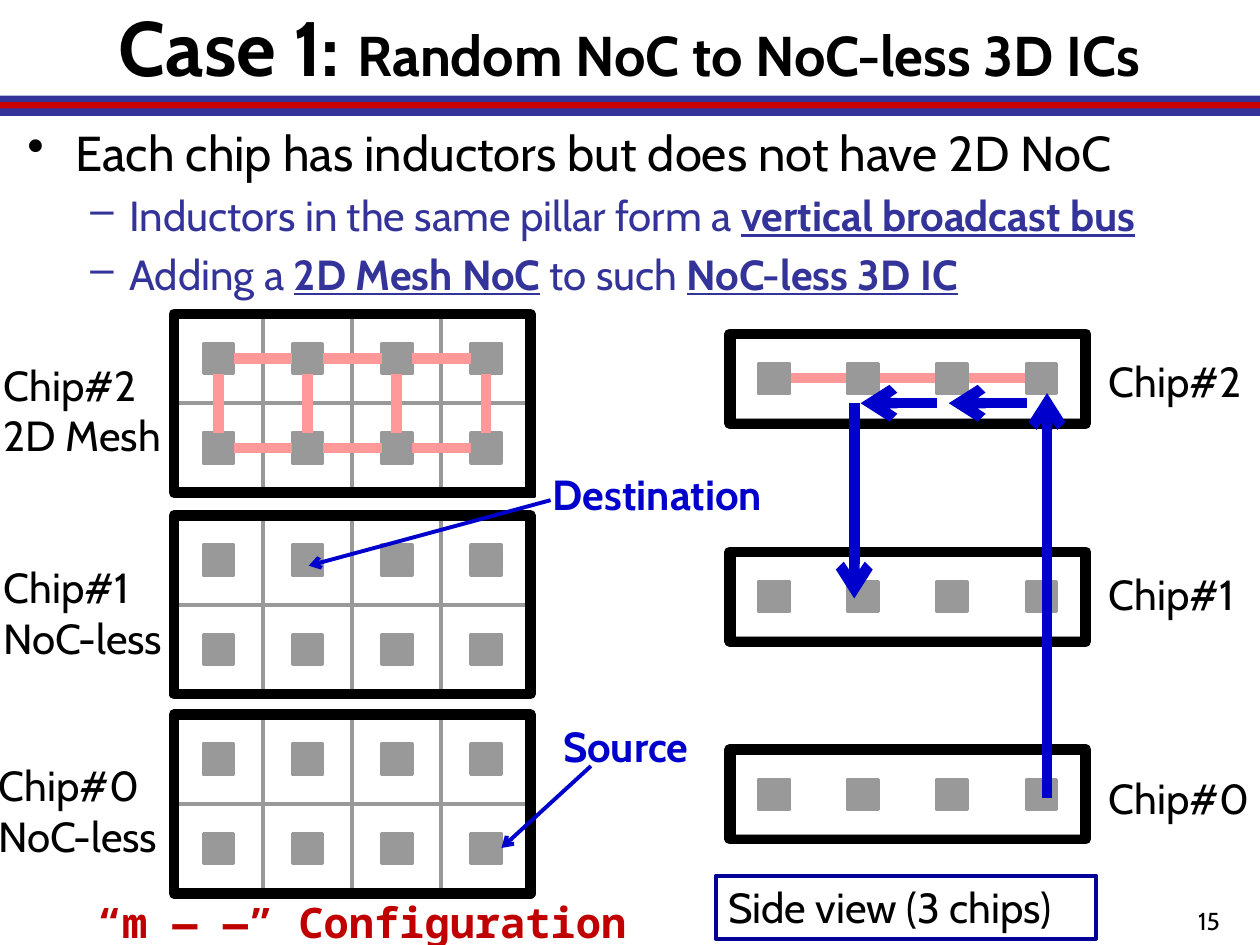
from lxml.etree import SubElement
from pptx import Presentation
from pptx.dml.color import RGBColor as RGB
from pptx.enum.shapes import MSO_CONNECTOR as Conn, MSO_SHAPE as Shape
from pptx.enum.text import MSO_ANCHOR as Anchor, PP_ALIGN as Align
from pptx.oxml.ns import qn
from pptx.util import Inches, Pt

HUE = {"black": "000000", "white": "FFFFFF", "navy": "333399", "band": "CC0000",
       "link": "FF0000", "route": "0000CC", "edge": "000099", "brick": "C00000"}
FONT, MONO = "Cabin", "Noto Sans Mono"

deck = Presentation()
deck.slide_width, deck.slide_height = Inches(10), Inches(7.5)
slide = deck.slides.add_slide(deck.slide_layouts[6])
shapes = slide.shapes


def box(x, y, w, h, fill=None, edge="black", width=2, alpha=None):
    item = shapes.add_shape(Shape.RECTANGLE, Inches(x), Inches(y), Inches(w), Inches(h))
    item.shadow.inherit = False
    if fill:
        item.fill.solid()
        item.fill.fore_color.rgb = RGB.from_string(HUE[fill])
    else:
        item.fill.background()
    if edge:
        item.line.color.rgb = RGB.from_string(HUE[edge])
        item.line.width = Pt(width)
    else:
        item.line.fill.background()
    if alpha:
        tint = item._element.spPr.find(qn("a:solidFill"))[0]
        SubElement(tint, qn("a:alpha"), val=str(alpha * 1000))
    return item


def line(x1, y1, x2, y2, color="link", width=6, arrow=False):
    item = shapes.add_connector(Conn.STRAIGHT, Inches(x1), Inches(y1), Inches(x2), Inches(y2))
    item.line.color.rgb = RGB.from_string(HUE[color])
    item.line.width = Pt(width)
    props = item._element.spPr
    if arrow:
        SubElement(props.find(qn("a:ln")), qn("a:headEnd"), type="arrow")
    SubElement(props, qn("a:effectLst"))


# Header bands
box(0, 0.76, 10.01, 0.16, "navy", None)
box(0, 0.81, 10.01, 0.05, "band", None)

# Title and bullets: runs are (text, size, marked)
title = shapes.add_textbox(Inches(0), Inches(-0.03), Inches(10), Inches(0.79)).text_frame
title.word_wrap = True
title.vertical_anchor = Anchor.MIDDLE
head = title.paragraphs[0]
head.alignment = Align.CENTER
head.font.name, head.font.bold = FONT, True
head.font.color.rgb = RGB.from_string(HUE["black"])
for text, size in (("Case 1: ", 44), ("Random NoC to NoC-less 3D ICs", 32)):
    run = head.add_run()
    run.text, run.font.size = text, Pt(size)

body = shapes.add_textbox(Inches(0.12), Inches(0.92), Inches(9.96), Inches(1.57)).text_frame
body.word_wrap = True
points = [
    (0, [("Each chip has inductors but does not have 2D NoC", False)]),
    (1, [("Inductors in the same pillar form a ", False), ("vertical broadcast bus", True)]),
    (1, [("Adding a ", False), ("2D Mesh NoC", True), (" to such ", False),
         ("NoC-less 3D IC", True)]),
]
styles = [("•", 28, "black", 0.38, 0.38), ("–", 24, "navy", 0.81, 0.31)]
for i, (level, runs) in enumerate(points):
    mark, size, color, left, hang = styles[level]
    para = body.add_paragraph() if i else body.paragraphs[0]
    para.level = level
    para.space_before = Pt(size * 0.2)
    para.font.name, para.font.size = FONT, Pt(size)
    para.font.color.rgb = RGB.from_string(HUE[color])
    props = para._p.get_or_add_pPr()
    props.set("marL", str(Inches(left)))
    props.set("indent", str(-Inches(hang)))
    bullet = SubElement(props, qn("a:buChar"), char=mark)
    props.find(qn("a:defRPr")).addprevious(bullet)
    for text, marked in runs:
        run = para.add_run()
        run.text = text
        if marked:
            run.font.bold = run.font.underline = True

# Top views: a 4 x 2 grid of cells, one inductor in each
COLS, ROWS, NODE = 4, 2, 0.24
WIDE, TALL = 2.83, 1.42
cw, ch = WIDE / COLS, TALL / ROWS
dx, dy = (cw - NODE) / 2, (ch - NODE) / 2
left = 1.38
for top, mesh, vx, vy in ((5.67, False, 0, 0), (4.09, False, 0, 0.02), (2.49, True, 0.03, 0.03)):
    for col in range(COLS):
        for row in range(ROWS):
            x, y = left + col * cw, top + row * ch
            box(x, y, cw, ch, "white")
            box(x + dx, y + dy, NODE, NODE, "black")
    if mesh:
        for col in range(COLS):
            x = left + (col + 0.5) * cw
            line(x, top + dy + NODE, x, top + ch + dy)
            for row in range(ROWS):
                y = top + (row + 0.5) * ch
                if col < COLS - 1:
                    line(x + NODE / 2, y, x + cw - NODE / 2, y)
    box(left + vx, top + vy, WIDE, TALL, "white", alpha=60)
    box(left, top, WIDE, TALL, width=6)

# Side views
side = 5.79
line(8.15, 3, 6.26, 3)
for top in (2.65, 4.38, 5.95):
    for col in range(COLS):
        box(side + col * cw + dx, top + dy, NODE, NODE, "black")
    box(side, top, WIDE, ch, width=6)
    box(side + 0.04, top + 0.03, 2.76, 0.66, "white", alpha=60)

# Route through the chips, and pointers; the arrowhead is at the first point
for ends in ((8.31, 3.12, 8.31, 6.33), (7.53, 3.2, 8.15, 3.2),
             (6.83, 3.2, 7.44, 3.2), (6.78, 4.75, 6.78, 3.2)):
    line(*ends, "route", 6, True)
for ends in ((3.98, 6.73, 4.69, 6.08), (2.45, 4.49, 4.37, 3.97)):
    line(*ends, "route", 2.25, True)

# Labels
box(5.68, 6.95, 3.02, 0.5, "white", "edge", 2.25)
labels = [
    ("Chip#2\n2D Mesh", -0.07, 2.8, 2.08, 0.91, 24, FONT, "black", False),
    ("Chip#1\nNoC-less", -0.07, 4.41, 2.08, 0.91, 24, FONT, "black", False),
    ("Chip#0\nNoC-less", -0.11, 5.98, 2.11, 0.91, 24, FONT, "black", False),
    ("Chip#2", 8.7, 2.77, 1.42, 0.5, 24, FONT, "black", False),
    ("Chip#1", 8.7, 4.46, 1.42, 0.5, 24, FONT, "black", False),
    ("Chip#0", 8.7, 6.08, 1.42, 0.5, 24, FONT, "black", False),
    ("Side view (3 chips)", 5.68, 6.95, 3.02, 0.5, 24, FONT, "black", False),
    ("Destination", 4.29, 3.67, 2.28, 0.5, 24, FONT, "route", True),
    ("Source", 4.37, 5.67, 1.42, 0.5, 24, FONT, "route", True),
    ("“m ― ―” Configuration", 0.67, 7.07, 4.65, 0.5, 24, MONO, "brick", True),
    ("15", 9.41, 7.14, 0.68, 0.4, 14, FONT, "black", False),
]
for text, x, y, w, h, size, face, color, bold in labels:
    frame = shapes.add_textbox(Inches(x), Inches(y), Inches(w), Inches(h)).text_frame
    frame.word_wrap = True
    frame.text = text
    for para in frame.paragraphs:
        para.font.name, para.font.size, para.font.bold = face, Pt(size), bold
        para.font.color.rgb = RGB.from_string(HUE[color])

deck.save("out.pptx")
